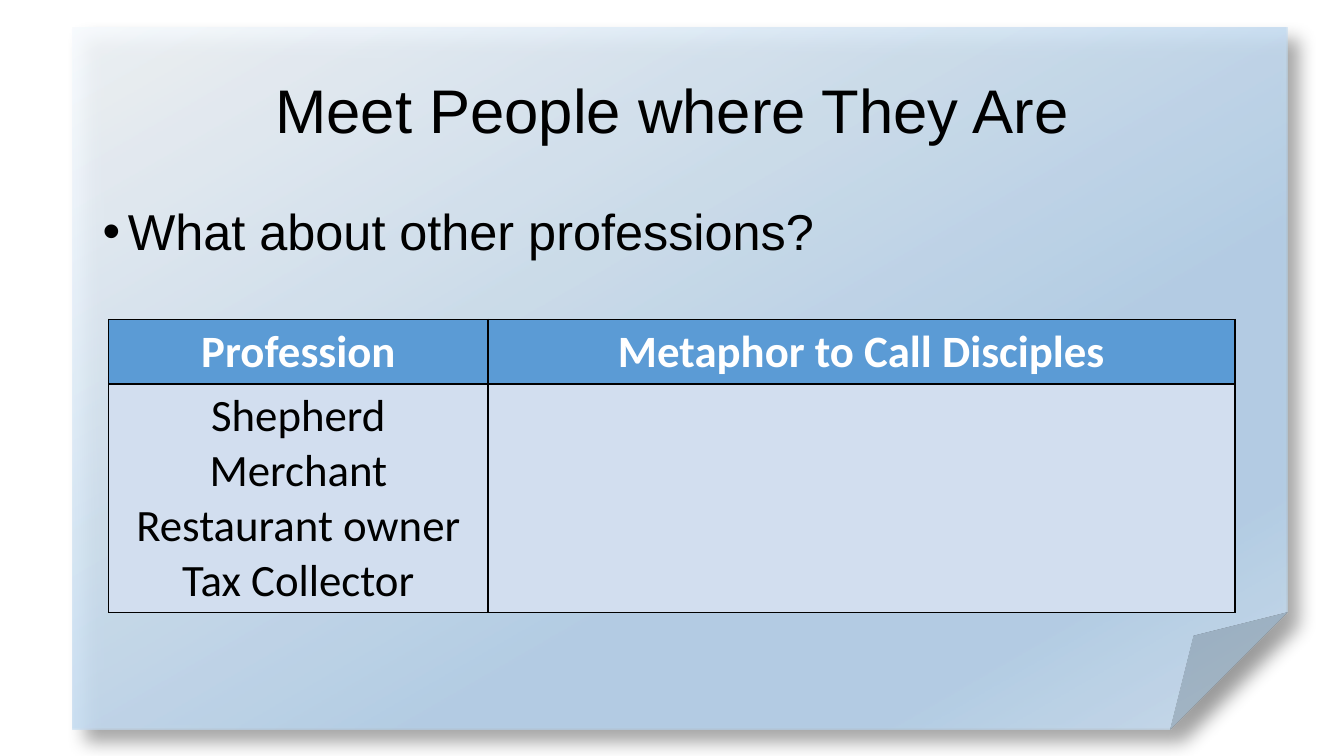
from lxml.etree import SubElement
from pptx import Presentation
from pptx.dml.color import RGBColor
from pptx.enum.shapes import MSO_SHAPE
from pptx.enum.text import MSO_ANCHOR, PP_ALIGN
from pptx.oxml import parse_xml
from pptx.oxml.ns import nsdecls, qn
from pptx.util import Inches, Pt

COLORS = {
    "text": "000000",
    "header_text": "FFFFFF",
    "header_fill": "5B9BD5",
    "body_fill": "D2DEEF",
    "border": "000000",
    "shadow": "000000",
    "paper_light": "F7FAFD",
    "paper_mid": "B5D2EC",
    "paper_end": "CEE1F2",
}
PAPER_STOPS = [(0, "paper_light"), (64, "paper_mid"), (83, "paper_mid"), (100, "paper_end")]
HEADERS = ["Profession", "Metaphor to Call Disciples"]
PROFESSIONS = ["Shepherd", "Merchant", "Restaurant owner", "Tax Collector"]
COLUMN_WIDTHS = [3.76, 7.41]
ROW_HEIGHTS = [0.64, 2.27]


def color(name):
    return RGBColor.from_string(COLORS[name])


def write_paragraph(paragraph, text, color_name="text", paragraph_format=None, **font_format):
    for name, value in (paragraph_format or {}).items():
        setattr(paragraph, name, value)
    run = paragraph.add_run()
    run.text = text
    for name, value in font_format.items():
        setattr(run.font, name, value)
    run.font.color.rgb = color(color_name)


def add_paper(slide):
    """Add the folded sheet with its translucent gradient and shadow."""
    paper = slide.shapes.add_shape(
        MSO_SHAPE.FOLDED_CORNER, Inches(0.72), Inches(0.27), Inches(12.05), Inches(6.97)
    )
    paper.line.fill.background()
    stops = "".join(
        f'<a:gs pos="{position * 1000}"><a:srgbClr val="{COLORS[name]}">'
        '<a:alpha val="87000"/></a:srgbClr></a:gs>'
        for position, name in PAPER_STOPS
    )
    gradient = parse_xml(
        f'<a:gradFill {nsdecls("a")} rotWithShape="1"><a:gsLst>{stops}</a:gsLst>'
        f'<a:lin ang="{60 * 60000}" scaled="0"/></a:gradFill>'
    )
    shadow = parse_xml(
        f'<a:effectLst {nsdecls("a")}><a:outerShdw blurRad="{Pt(13)}" dist="{Pt(13)}" '
        f'dir="{45 * 60000}" algn="tl" rotWithShape="0">'
        f'<a:srgbClr val="{COLORS["shadow"]}"><a:alpha val="40000"/></a:srgbClr>'
        "</a:outerShdw></a:effectLst>"
    )
    properties = paper._element.spPr
    properties.find(qn("a:prstGeom")).addnext(gradient)
    properties.append(shadow)


def add_text(slide, top, height, text, size, anchor, paragraph_format):
    box = slide.shapes.add_textbox(Inches(0.92), Inches(top), Inches(11.5), Inches(height))
    frame = box.text_frame
    frame.word_wrap = True
    frame.vertical_anchor = anchor
    paragraph = frame.paragraphs[0]
    write_paragraph(paragraph, text, paragraph_format=paragraph_format,
                    name="Arial", size=Pt(size))
    return paragraph


def add_bullet(paragraph):
    properties = paragraph._p.get_or_add_pPr()
    properties.set("marL", str(Inches(0.25)))
    properties.set("indent", str(Inches(-0.25)))
    SubElement(properties, qn("a:buFont")).set("typeface", "Arial")
    SubElement(properties, qn("a:buChar")).set("char", "•")


def format_cell(cell, fill_name):
    """Draw the borders, then the fill."""
    properties = cell._tc.get_or_add_tcPr()
    for side in ("lnL", "lnR", "lnT", "lnB"):
        border = SubElement(properties, qn(f"a:{side}"), w=str(Pt(1)))
        fill = SubElement(border, qn("a:solidFill"))
        SubElement(fill, qn("a:srgbClr"), val=COLORS["border"])
    cell.fill.solid()
    cell.fill.fore_color.rgb = color(fill_name)


def write_cell(cell, lines, color_name, bold):
    frame = cell.text_frame
    for index, line in enumerate(lines):
        paragraph = frame.add_paragraph() if index else frame.paragraphs[0]
        write_paragraph(paragraph, line, color_name, {"alignment": PP_ALIGN.CENTER},
                        name="Calibri", size=Pt(32), bold=bold)


def add_profession_table(slide):
    table = slide.shapes.add_table(
        2, 2, Inches(1.08), Inches(3.17),
        Inches(sum(COLUMN_WIDTHS)), Inches(sum(ROW_HEIGHTS)),
    ).table
    for column, width in zip(table.columns, COLUMN_WIDTHS):
        column.width = Inches(width)
    for row, height, fill_name in zip(table.rows, ROW_HEIGHTS, ("header_fill", "body_fill")):
        row.height = Inches(height)
        for cell in row.cells:
            format_cell(cell, fill_name)
    for index, header in enumerate(HEADERS):
        write_cell(table.cell(0, index), [header], "header_text", True)
    write_cell(table.cell(1, 0), PROFESSIONS, "text", False)


def main():
    presentation = Presentation()
    presentation.slide_width = Inches(13.33)
    presentation.slide_height = Inches(7.5)
    slide = presentation.slides.add_slide(presentation.slide_layouts[6])
    add_paper(slide)
    add_text(slide, 0.4, 1.45, "Meet People where They Are", 44, MSO_ANCHOR.MIDDLE,
             {"alignment": PP_ALIGN.CENTER, "line_spacing": 0.9})
    question = add_text(slide, 2, 4.76, "What about other professions?", 36, MSO_ANCHOR.TOP,
                        {"line_spacing": 0.9, "space_before": Pt(10)})
    add_bullet(question)
    add_profession_table(slide)
    presentation.save("out.pptx")


if __name__ == "__main__":
    main()
